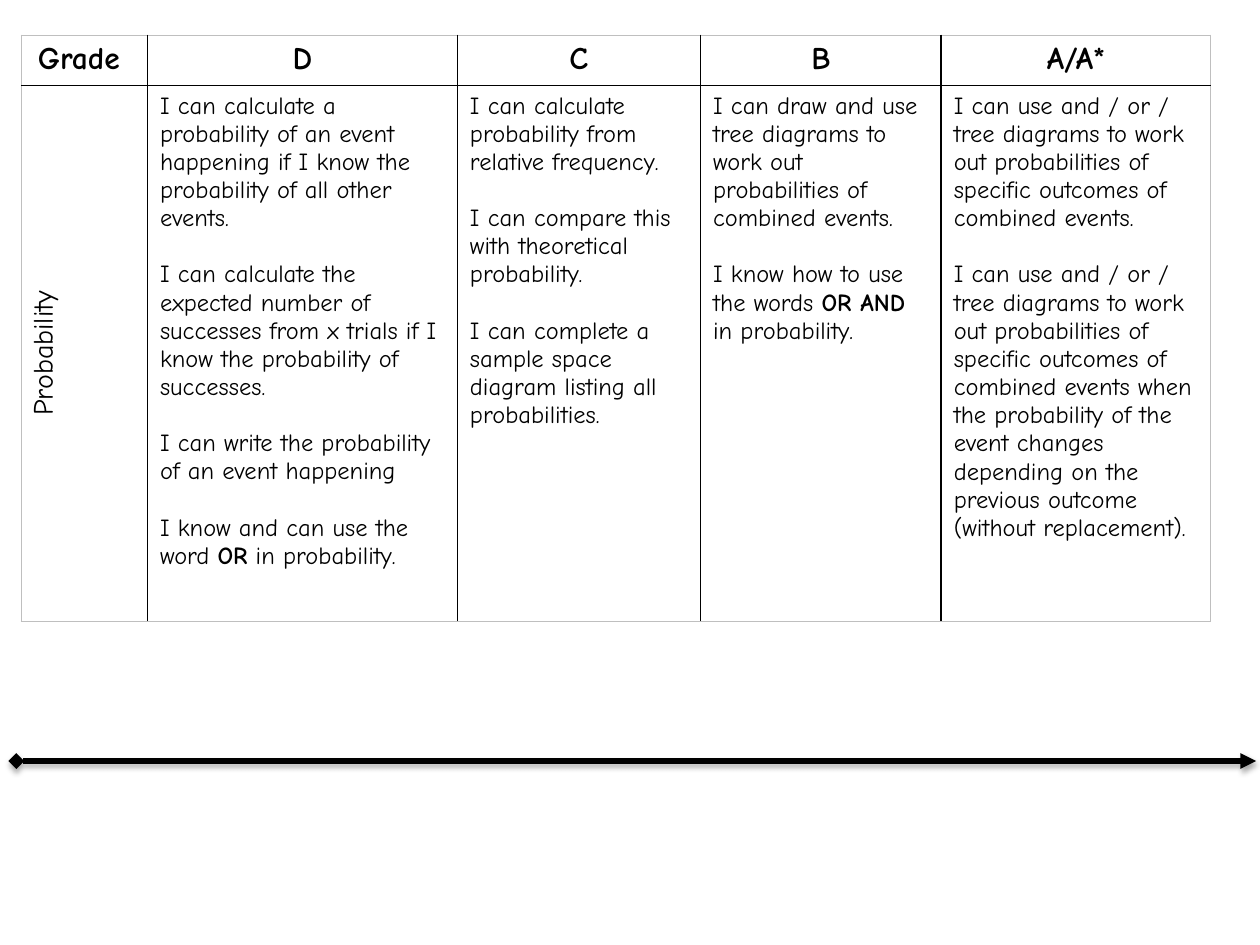
"""Build a probability grade ladder slide: a table above a progress arrow."""
from lxml.etree import SubElement
from pptx import Presentation
from pptx.dml.color import RGBColor
from pptx.enum.shapes import MSO_CONNECTOR
from pptx.enum.text import PP_ALIGN
from pptx.oxml import parse_xml
from pptx.oxml.ns import nsdecls, qn
from pptx.util import Inches, Pt

FONT = "Comic Neue"
BLACK, GREY, WHITE = "000000", "BFBFBF", "FFFFFF"
WIDTHS = [1, 2.46, 1.93, 1.91, 2.14]
HEIGHTS = [0.4, 4.25]
GRADES = ["Grade", "D", "C", "B", "A/A*"]
SKILLS = [
    ["I can calculate a probability of an event happening if I know the probability of all other events.",
     "I can calculate the expected number of successes from x trials if I know the probability of successes.",
     "I can write the probability of an event happening",
     "I know and can use the word |OR| in probability."],
    ["I can calculate probability from relative frequency.",
     "I can compare this with theoretical probability.",
     "I can complete a sample space diagram listing all probabilities."],
    ["I can draw and use tree diagrams to work out probabilities of combined events.",
     "I know how to use the words |OR AND| in probability."],
    ["I can use and / or / tree diagrams to work out probabilities of specific outcomes of combined events.",
     "I can use and / or / tree diagrams to work out probabilities of specific outcomes of combined events "
     "when the probability of the event changes depending on the previous outcome (without replacement)."],
]


def color(fmt, value):
    fmt.rgb = RGBColor.from_string(value)


def add_runs(p, text, size, bold=False):
    for i, part in enumerate(text.split("|")):
        r = p.add_run()
        r.text = part
        r.font.name = FONT
        r.font.size = Pt(size)
        r.font.bold = bold or i % 2 == 1
        color(r.font.color, BLACK)


prs = Presentation()
prs.slide_width, prs.slide_height = Inches(10), Inches(7.5)
s = prs.slides.add_slide(prs.slide_layouts[6])

tbl = s.shapes.add_table(2, 5, Inches(0.17), Inches(0.28),
                         Inches(sum(WIDTHS)), Inches(sum(HEIGHTS))).table
tbl.first_row = tbl.horz_banding = False
for col, width in zip(tbl.columns, WIDTHS):
    col.width = Inches(width)
for row, height in zip(tbl.rows, HEIGHTS):
    row.height = Inches(height)

for i in range(2):
    for j in range(5):
        cell = tbl.cell(i, j)
        tcPr = cell._tc.get_or_add_tcPr()
        outer = {"lnL": j == 0, "lnR": j == 4, "lnT": i == 0, "lnB": i == 1}
        for side, is_outer in outer.items():
            ln = SubElement(tcPr, qn(f"a:{side}"), w=str(Pt(0.75 if is_outer else 1)))
            fill = SubElement(ln, qn("a:solidFill"))
            SubElement(fill, qn("a:srgbClr"), val=GREY if is_outer else BLACK)
        cell.fill.solid()
        color(cell.fill.fore_color, WHITE)
        cell.margin_left = cell.margin_right = Inches(0.1)
        cell.margin_top = cell.margin_bottom = Inches(0.05)

for j, grade in enumerate(GRADES):
    p = tbl.cell(0, j).text_frame.paragraphs[0]
    p.alignment = PP_ALIGN.CENTER
    add_runs(p, grade, 18, bold=True)
tbl.cell(0, 0).margin_right = Inches(0.19)

topic = tbl.cell(1, 0)
topic._tc.get_or_add_tcPr().set("vert", "vert270")
p = topic.text_frame.paragraphs[0]
p.alignment = PP_ALIGN.CENTER
add_runs(p, "Probability", 16)

for j, skills in enumerate(SKILLS, start=1):
    tf = tbl.cell(1, j).text_frame
    for k, skill in enumerate(skills):
        p = tf.add_paragraph() if k else tf.paragraphs[0]
        p.space_before = Pt(16 if k else 0)
        add_runs(p, skill, 14)

arrow = s.shapes.add_connector(MSO_CONNECTOR.STRAIGHT, Inches(0.13), Inches(6.04),
                               Inches(9.97), Inches(6.04))
color(arrow.line.color, BLACK)
arrow.line.width = Pt(3)
ln = arrow.line._get_or_add_ln()
SubElement(ln, qn("a:headEnd"), type="diamond")
SubElement(ln, qn("a:tailEnd"), type="triangle")
arrow._element.spPr.append(parse_xml(
    f'<a:effectLst {nsdecls("a")}>'
    f'<a:outerShdw blurRad="{Pt(3.1)}" dist="{Pt(1.8)}" dir="5400000" rotWithShape="0">'
    f'<a:srgbClr val="{BLACK}"><a:alpha val="35000"/></a:srgbClr>'
    '</a:outerShdw></a:effectLst>'))

prs.save("out.pptx")
